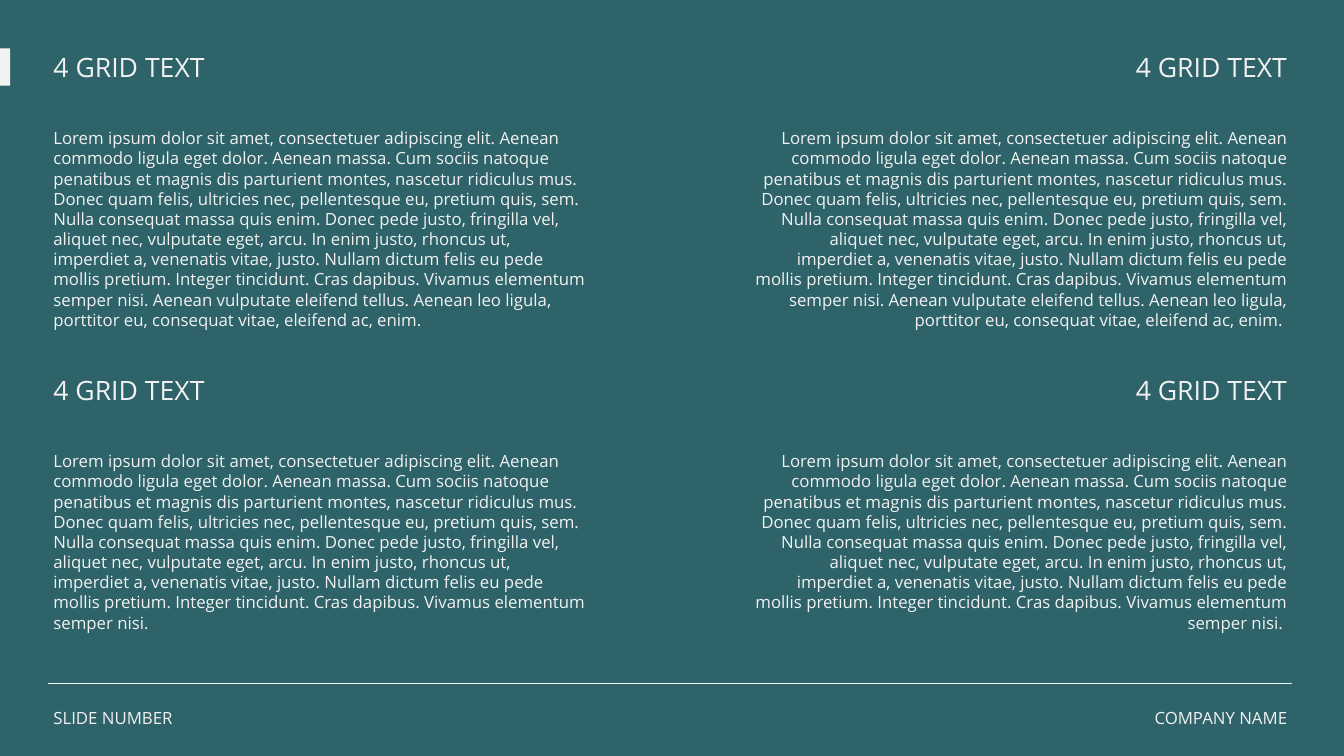
import dataclasses
import lxml.etree
import pptx
import pptx.dml.color
import pptx.enum.shapes
import pptx.enum.text
import pptx.oxml.ns
import pptx.util

LEFT = pptx.enum.text.PP_ALIGN.LEFT
RIGHT = pptx.enum.text.PP_ALIGN.RIGHT
WIDE, HIGH = pptx.util.Inches(26.67), pptx.util.Inches(15)

LOREM = (
    "Lorem ipsum dolor sit amet, consectetuer adipiscing elit. Aenean commodo "
    "ligula eget dolor. Aenean massa. Cum sociis natoque penatibus et magnis dis "
    "parturient montes, nascetur ridiculus mus. Donec quam felis, ultricies nec, "
    "pellentesque eu, pretium quis, sem. Nulla consequat massa quis enim. Donec "
    "pede justo, fringilla vel, aliquet nec, vulputate eget, arcu. In enim justo, "
    "rhoncus ut, imperdiet a, venenatis vitae, justo. Nullam dictum felis eu pede "
    "mollis pretium. Integer tincidunt. Cras dapibus. Vivamus elementum semper nisi."
)
MORE = (
    " Aenean vulputate eleifend tellus. Aenean leo ligula, porttitor eu, "
    "consequat vitae, eleifend ac, enim."
)


@dataclasses.dataclass(frozen=True)
class Theme:
    """Hold the colours, font and type sizes."""
    back: str = "2D6369"
    ink: str = "F2F2F2"
    font: str = "Open Sans"
    head: int = 38
    body: int = 24
    rule: float = 1.75


THEME = Theme()


def tint(code):
    """Turn a hex code into a colour."""
    return pptx.dml.color.RGBColor.from_string(code)


def scale(box):
    """Turn percent shares of the slide into lengths."""
    sides = (WIDE, HIGH, WIDE, HIGH)
    return [round(share * side / 100) for share, side in zip(box, sides)]


def write(slide, box, text, size=THEME.body, align=LEFT, shape=None):
    """Put formatted text in a new text box or in the shape given."""
    shape = shape or slide.shapes.add_textbox(0, 0, 0, 0)
    shape.left, shape.top, shape.width, shape.height = scale(box)
    frame = shape.text_frame
    frame.word_wrap = True
    frame.auto_size = pptx.enum.text.MSO_AUTO_SIZE.SHAPE_TO_FIT_TEXT
    frame.vertical_anchor = pptx.enum.text.MSO_ANCHOR.TOP
    frame.text = text
    para = frame.paragraphs[0]
    para.alignment = align
    font = para.runs[0].font
    font.name, font.size = THEME.font, pptx.util.Pt(size)
    font.color.rgb = tint(THEME.ink)


def block(slide, box, text, align, title=None):
    """Place a heading with its body text in one cell."""
    x, y, w, h = box
    head, drop = 26.77, 10.2
    start = x + w - head if align == RIGHT else x
    write(slide, (start, y, head, 4.93), "4 GRID TEXT",
          size=THEME.head, align=align, shape=title)
    write(slide, (x, y + drop, w, h - drop), text, align=align)


def grid(slide, box):
    """Place two rows of two text blocks."""
    x, y, w, h = box
    wide, step = 40.49, 42.73
    rows = ((LOREM + MORE, 37.8), (LOREM, h - step))
    title = slide.shapes.title
    for row, (text, high) in enumerate(rows):
        top = y + row * step
        block(slide, (x, top, wide, high), text, LEFT, title=title)
        block(slide, (x + w - wide, top, wide, high), text + " ", RIGHT)
        title = None


def mark(slide, box):
    """Draw the tab at the slide edge."""
    shape = slide.shapes.add_shape(
        pptx.enum.shapes.MSO_SHAPE.RECTANGLE, *scale(box))
    shape.shadow.inherit = False
    shape.fill.solid()
    shape.fill.fore_color.rgb = tint(THEME.ink)
    shape.line.fill.background()


def foot(slide, box):
    """Draw the footer rule with a label at each end."""
    x, y, w, h = box
    left, top, wide, _ = scale(box)
    line = slide.shapes.add_connector(
        pptx.enum.shapes.MSO_CONNECTOR.STRAIGHT, left, top, left + wide, top)
    line.line.color.rgb = tint(THEME.ink)
    line.line.width = pptx.util.Pt(THEME.rule)
    props = line.element.find(pptx.oxml.ns.qn("p:spPr"))
    lxml.etree.SubElement(props, pptx.oxml.ns.qn("a:effectLst"))
    high = 3.33
    base = y + h - high
    write(slide, (x, base, 10.5, high), "SLIDE NUMBER")
    write(slide, (x + w - 11.62, base, 11.62, high), "COMPANY NAME", align=RIGHT)


def main():
    """Build the slide and save it."""
    deck = pptx.Presentation()
    deck.slide_width, deck.slide_height = WIDE, HIGH
    slide = deck.slides.add_slide(deck.slide_layouts.get_by_name("Title Only"))
    slide.background.fill.solid()
    slide.background.fill.fore_color.rgb = tint(THEME.back)
    edge, top, span = 3.6, 6.4, 92.54
    grid(slide, (edge, top, span, 77.87))
    mark(slide, (0, top, 0.75, 4.93))
    foot(slide, (edge, 90.4, span, 6.27))
    deck.save("out.pptx")


if __name__ == "__main__":
    main()
